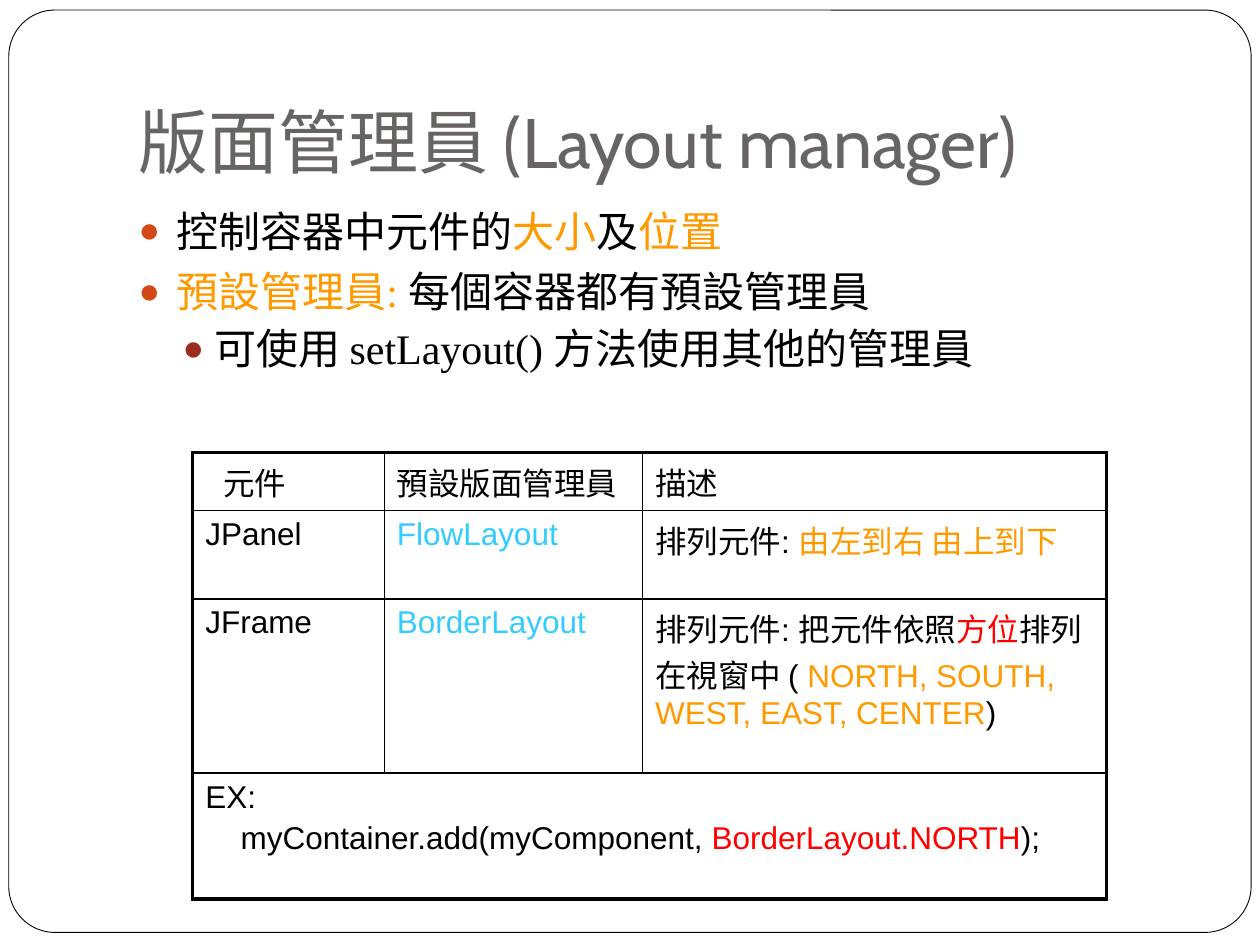
"""Build a slide on layout managers with a bulleted list and a table."""
from dataclasses import dataclass

from lxml.etree import SubElement
from pptx import Presentation
from pptx.dml.color import RGBColor
from pptx.enum.shapes import MSO_SHAPE as Shape
from pptx.enum.text import MSO_ANCHOR as Anchor, MSO_AUTO_SIZE as AutoSize, PP_ALIGN as Align
from pptx.oxml.ns import qn
from pptx.util import Inches, Pt

BLACK = RGBColor(0x00, 0x00, 0x00)
WHITE = RGBColor(0xFF, 0xFF, 0xFF)
GRAY = RGBColor(0x69, 0x64, 0x64)
ORANGE = RGBColor(0xFF, 0x99, 0x00)
CYAN = RGBColor(0x33, 0xCC, 0xFF)
RED = RGBColor(0xFF, 0x00, 0x00)
RUST = RGBColor(0xD3, 0x48, 0x17)
BRICK = RGBColor(0x9B, 0x2D, 0x1F)

GRID_COLUMNS, GRID_ROWS = 100, 75
UNIT = Inches(0.1)
THIN, THICK = Pt(1), Pt(2.25)


@dataclass
class Box:
    """A rectangle in grid columns and rows."""
    left: float
    top: float
    width: float
    height: float

    def lengths(self) -> list[int]:
        return [grid(value) for value in (self.left, self.top, self.width, self.height)]


@dataclass
class Line:
    """A paragraph of (text, colour) runs with its indent in grid columns."""
    runs: list[tuple[str, RGBColor]]
    indent: float = 0


@dataclass
class Bullet:
    """A list item with its level, bullet colour and spacing."""
    line: Line
    hanging: float
    color: RGBColor
    space: float
    level: int = 0


TITLE = Line([("版面管理員 (Layout manager)", GRAY)])
BULLETS = [
    Bullet(Line([("控制容器中元件的", BLACK), ("大小", ORANGE), ("及", BLACK), ("位置", ORANGE)], 3),
           3, RUST, 5.8),
    Bullet(Line([("預設管理員: ", ORANGE), ("每個容器都有預設管理員", BLACK)], 3), 3, RUST, 5.8),
    Bullet(Line([("可使用 setLayout() 方法使用其他的管理員", BLACK)], 6), 2.5, BRICK, 3.7, 1),
]
COLUMN_WIDTHS = [15.2, 20.5, 36.8]
ROW_HEIGHTS = [4.6, 7, 13.8, 10]
TABLE_ROWS = [
    [[Line([("元件", BLACK)], 1.4)], [Line([("預設版面管理員", BLACK)])], [Line([("描述", BLACK)])]],
    [[Line([("JPanel", BLACK)])], [Line([("FlowLayout", CYAN)])],
     [Line([("排列元件: ", BLACK), ("由左到右 由上到下", ORANGE)])]],
    [[Line([("JFrame", BLACK)])], [Line([("BorderLayout", CYAN)])],
     [Line([("排列元件: 把元件依照", BLACK), ("方位", RED), ("排列在視窗中 ( ", BLACK),
            ("NORTH, SOUTH, WEST, EAST, CENTER", ORANGE), (")", BLACK)])]],
    [[Line([("EX:", BLACK)]),
      Line([("myContainer.add(myComponent, ", BLACK), ("BorderLayout.NORTH", RED),
            (");", BLACK)], 2.8)]],
]


def grid(value: float) -> int:
    """Convert grid units to a length."""
    return round(value * UNIT)


def write(paragraph, line: Line, *, font: str, size: float, space: float = 0,
          hanging: float = 0) -> None:
    """Fill a paragraph with formatted runs."""
    paragraph.alignment = Align.LEFT
    paragraph.space_before = Pt(space)
    properties = paragraph._p.get_or_add_pPr()
    properties.set("marL", str(grid(line.indent)))
    properties.set("indent", str(-grid(hanging)))
    for text, color in line.runs:
        run = paragraph.add_run()
        run.text = text
        run.font.name = font
        run.font.size = Pt(size)
        run.font.color.rgb = color


def add_bullet(paragraph, color: RGBColor) -> None:
    """Give a paragraph a coloured round bullet."""
    properties = paragraph._p.get_or_add_pPr()
    SubElement(SubElement(properties, qn("a:buClr")), qn("a:srgbClr"), val=str(color))
    SubElement(properties, qn("a:buSzPct"), val="85000")
    SubElement(properties, qn("a:buFont"), typeface="Arial")
    SubElement(properties, qn("a:buChar"), char="●")


def place(placeholder, box: Box, anchor: Anchor):
    """Move a placeholder and return its text frame."""
    placeholder.left, placeholder.top, placeholder.width, placeholder.height = box.lengths()
    frame = placeholder.text_frame
    frame.word_wrap = True
    frame.auto_size = AutoSize.NONE
    frame.vertical_anchor = anchor
    return frame


def add_card(slide, box: Box) -> None:
    """Draw the rounded frame behind everything else."""
    card = slide.shapes.add_shape(Shape.ROUNDED_RECTANGLE, *box.lengths())
    card.adjustments[0] = 0.05
    card.shadow.inherit = False
    card.fill.solid()
    card.fill.fore_color.rgb = WHITE
    card.line.color.rgb = BLACK
    card.line.width = Pt(0.5)
    slide.shapes._spTree.insert(2, card._element)


def add_borders(cell, **widths: int) -> None:
    """Draw black cell borders, keyed by the side's letter."""
    properties = cell._tc.get_or_add_tcPr()
    for side, width in widths.items():
        border = SubElement(properties, qn(f"a:ln{side}"), w=str(width))
        SubElement(SubElement(border, qn("a:solidFill")), qn("a:srgbClr"), val=str(BLACK))


def add_layout_table(slide, left: float, top: float) -> None:
    """Add the table of containers and their default layout managers."""
    box = Box(left, top, sum(COLUMN_WIDTHS), sum(ROW_HEIGHTS))
    table = slide.shapes.add_table(len(ROW_HEIGHTS), len(COLUMN_WIDTHS), *box.lengths()).table
    table.first_row = table.horz_banding = False
    for column, width in zip(table.columns, COLUMN_WIDTHS):
        column.width = grid(width)
    for row, height in zip(table.rows, ROW_HEIGHTS):
        row.height = grid(height)
    last_row = len(ROW_HEIGHTS) - 1
    table.cell(last_row, 0).merge(table.cell(last_row, len(COLUMN_WIDTHS) - 1))
    for row_index, row_lines in enumerate(TABLE_ROWS):
        for column_index, lines in enumerate(row_lines):
            cell = table.cell(row_index, column_index)
            add_borders(cell,
                        L=THICK if column_index == 0 else THIN,
                        R=THICK if column_index == len(row_lines) - 1 else THIN,
                        T=THICK if row_index == 0 else THIN,
                        B=THICK if row_index == last_row else THIN)
            cell.fill.background()
            frame = cell.text_frame
            for index, line in enumerate(lines):
                paragraph = frame.add_paragraph() if index else frame.paragraphs[0]
                write(paragraph, line, font="Arial", size=18, space=3.6)


def main() -> None:
    """Build and save the slide."""
    presentation = Presentation()
    presentation.slide_width = grid(GRID_COLUMNS)
    presentation.slide_height = grid(GRID_ROWS)
    slide = presentation.slides.add_slide(presentation.slide_layouts[1])
    add_card(slide, Box(0.7, 0.8, 98.6, 73.2))

    title = place(slide.shapes.title, Box(10, 3, 85, 12.5), Anchor.BOTTOM)
    title.margin_bottom = grid(1)
    write(title.paragraphs[0], TITLE, font="Cabin", size=40)

    body = place(slide.placeholders[1], Box(10, 15.8, 85, 50), Anchor.TOP)
    for index, bullet in enumerate(BULLETS):
        paragraph = body.add_paragraph() if index else body.paragraphs[0]
        paragraph.level = bullet.level
        write(paragraph, bullet.line, font="Times New Roman", size=24,
              space=bullet.space, hanging=bullet.hanging)
        add_bullet(paragraph, bullet.color)

    add_layout_table(slide, 15.3, 35.9)
    presentation.save("out.pptx")


if __name__ == "__main__":
    main()
